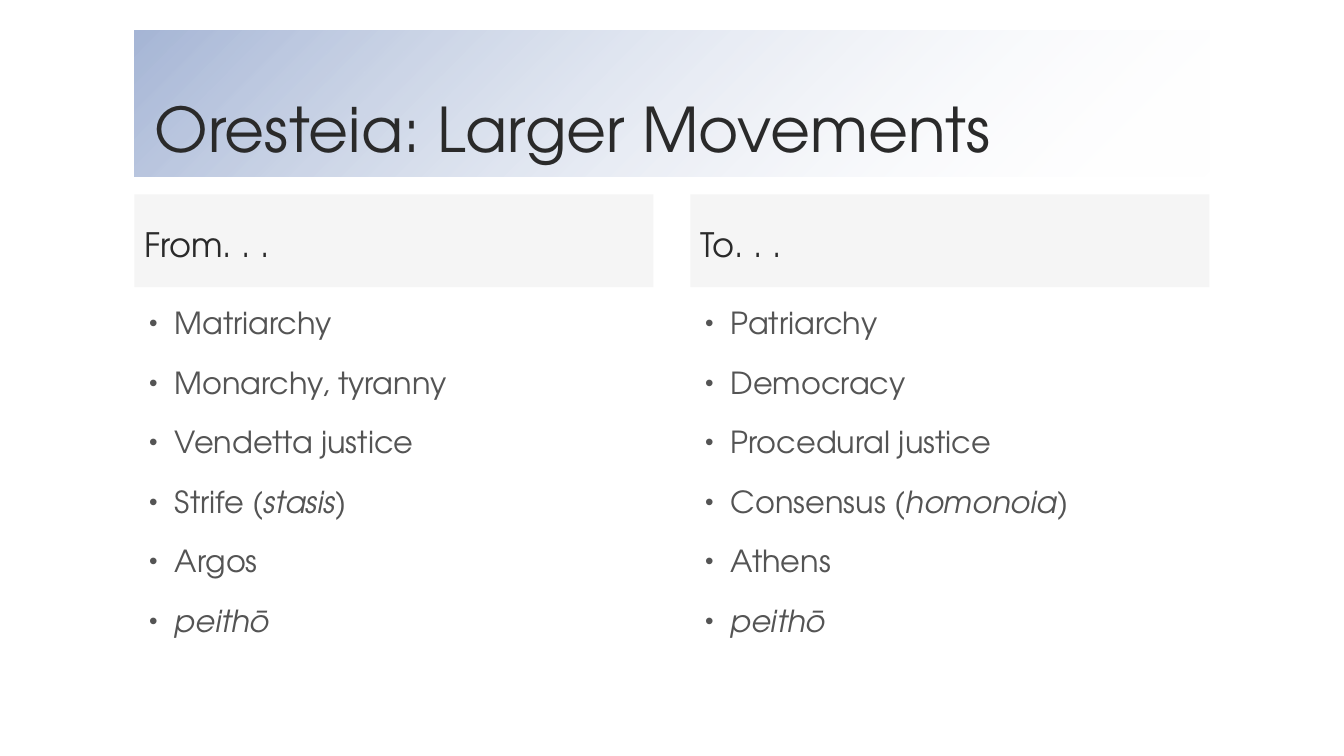
from lxml import etree
from pptx import Presentation
from pptx import util as u
from pptx.dml.color import RGBColor
from pptx.enum import shapes, text
from pptx.oxml import ns

FONT = "TeX Gyre Adventor"
INK = RGBColor(0x2A, 0x2A, 0x2A)
BODY = RGBColor(0x54, 0x54, 0x54)
BLUE = RGBColor(0xA6, 0xB6, 0xD6)
GREY = RGBColor(0xBF, 0xBF, 0xBF)
WHITE = RGBColor(0xFF, 0xFF, 0xFF)

COLUMNS = [
    ("From. . .", ["Matriarchy", "Monarchy, tyranny", "Vendetta justice",
                   "Strife (*stasis*)", "Argos", "*peithō*"]),
    ("To. . .", ["Patriarchy", "Democracy", "Procedural justice",
                 "Consensus (*homonoia*)", "Athens", "*peithō*"]),
]


def child(parent, tag, **attributes):
    """Append a DrawingML element and return it."""
    element = etree.SubElement(parent, ns.qn("a:" + tag))
    for name, value in attributes.items():
        element.set(name, str(value))
    return element


def set_alpha(color_element, percent):
    """Give a colour element an opacity in percent."""
    child(color_element, "alpha", val=percent * 1000)


def add_bullet(paragraph, color):
    """Give a paragraph a hanging round bullet."""
    properties = paragraph._p.get_or_add_pPr()
    properties.set("marL", str(u.Cm(0.76)))
    properties.set("indent", str(-u.Cm(0.64)))
    child(child(properties, "buClr"), "srgbClr", val=color)
    child(properties, "buSzPct", val=80000)
    child(properties, "buFont", typeface="Arial")
    child(properties, "buChar", char="•")


def write(shape, lines, size, color, anchor, line_spacing, space_before=0,
          side_inset=0.25, edge_inset=0.13, bullets=False):
    """Write lines into a shape, setting parts between asterisks in italics."""
    frame = shape.text_frame
    frame.word_wrap = True
    frame.vertical_anchor = anchor
    frame.margin_left = frame.margin_right = u.Cm(side_inset)
    frame.margin_top = frame.margin_bottom = u.Cm(edge_inset)
    for index, line in enumerate(lines):
        paragraph = frame.add_paragraph() if index else frame.paragraphs[0]
        paragraph.alignment = text.PP_ALIGN.LEFT
        paragraph.line_spacing = line_spacing
        paragraph.space_before = u.Pt(space_before)
        if bullets:
            add_bullet(paragraph, color)
        for position, part in enumerate(line.split("*")):
            if part:
                run = paragraph.add_run()
                run.text = part
                run.font.name = FONT
                run.font.size = u.Pt(size)
                run.font.color.rgb = color
                run.font.italic = position % 2 == 1


def add_panel(slide, left, top, width, height):
    """Add a plain rectangle without line or shadow."""
    panel = slide.shapes.add_shape(shapes.MSO_SHAPE.RECTANGLE, u.Cm(left),
                                   u.Cm(top), u.Cm(width), u.Cm(height))
    panel.shadow.inherit = False
    panel.line.fill.background()
    return panel


def add_title(slide, title, left, top, width, height):
    """Add the title on a band that fades out diagonally."""
    band = add_panel(slide, left, top, width, height)
    band.fill.gradient()
    for stop, color in zip(band.fill.gradient_stops, (BLUE, WHITE)):
        stop.color.rgb = color
    band.fill.gradient_angle = 315
    gradient = band._element.spPr.find(ns.qn("a:gradFill"))
    gradient.find(ns.qn("a:lin")).set("scaled", "0")
    set_alpha(gradient.findall(".//" + ns.qn("a:srgbClr"))[-1], 0)
    write(band, [title], 44, INK, text.MSO_ANCHOR.BOTTOM, 0.9,
          side_inset=0.51, edge_inset=0.25)


def add_column(slide, heading, items, left, top, width, height):
    """Add a shaded heading with a bulleted list below it."""
    heading_height, gap = 2.34, 0.38
    panel = add_panel(slide, left, top, width, heading_height)
    panel.fill.solid()
    panel.fill.fore_color.rgb = GREY
    set_alpha(panel._element.spPr.find(
        ns.qn("a:solidFill") + "/" + ns.qn("a:srgbClr")), 15)
    write(panel, [heading], 24, INK, text.MSO_ANCHOR.MIDDLE, 1.14)
    offset = heading_height + gap
    box = slide.shapes.add_textbox(u.Cm(left), u.Cm(top + offset),
                                   u.Cm(width), u.Cm(height - offset))
    write(box, items, 21.7, BODY, text.MSO_ANCHOR.TOP, 0.94,
          space_before=18, bullets=True)


def main():
    """Build and save the slide."""
    presentation = Presentation()
    presentation.slide_width = u.Cm(33.87)
    presentation.slide_height = u.Cm(19.05)
    slide = presentation.slides.add_slide(presentation.slide_layouts[6])
    left, width, column_width = 3.39, 27.09, 13.08
    add_title(slide, "Oresteia: Larger Movements", left, 0.76, width, 3.68)
    for index, (heading, items) in enumerate(COLUMNS):
        column_left = left + index * (width - column_width)
        add_column(slide, heading, items, column_left, 4.9, column_width, 11.81)
    presentation.save("out.pptx")


if __name__ == "__main__":
    main()
